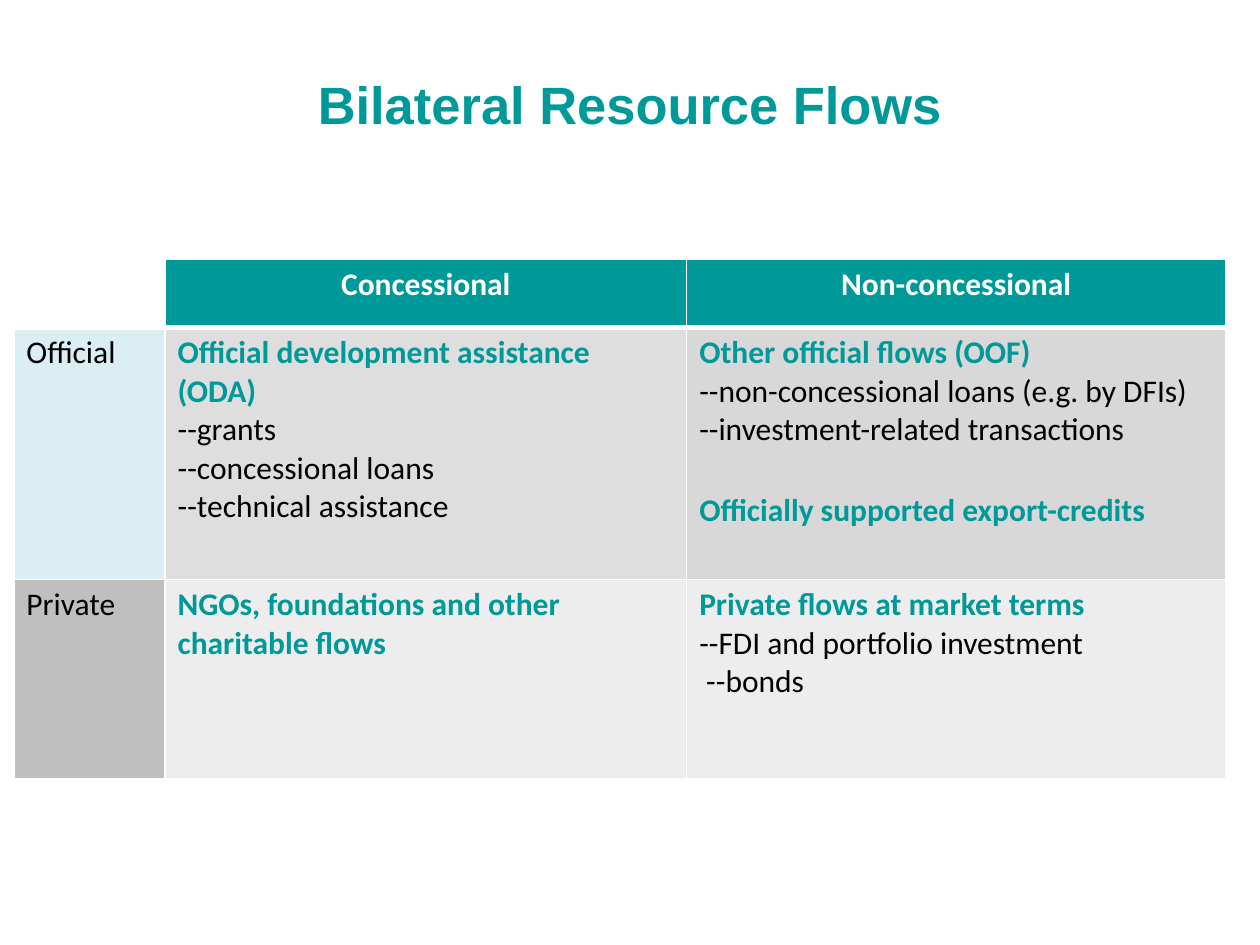
import pptx
import pptx.util
import pptx.dml.color
import pptx.enum.text
import pptx.oxml
import pptx.oxml.ns

Inches, Pt = pptx.util.Inches, pptx.util.Pt
RGBColor = pptx.dml.color.RGBColor
CENTER = pptx.enum.text.PP_ALIGN.CENTER

TEAL = RGBColor(0x00, 0x99, 0x99)
WHITE = RGBColor(0xFF, 0xFF, 0xFF)
BLACK = RGBColor(0x00, 0x00, 0x00)
PALE_BLUE = RGBColor(0xB7, 0xDE, 0xE8)
MID_GREY = RGBColor(0xBF, 0xBF, 0xBF)
LIGHT_GREY = RGBColor(0xD8, 0xD8, 0xD8)
FAINT_GREY = RGBColor(0xED, 0xED, 0xED)


def write(frame, text, size=18, font="Calibri", color=BLACK, bold=False,
          align=None, before=0, indent=0):
    """Fill the frame's first paragraph, or add one after existing text."""
    paragraph = frame.add_paragraph() if frame.text else frame.paragraphs[0]
    if indent:
        paragraph._p.get_or_add_pPr().set("marL", str(Pt(indent)))
    if before:
        paragraph.space_before = Pt(before)
    if align is not None:
        paragraph.alignment = align
    run = paragraph.add_run()
    run.text = text
    run.font.size, run.font.name, run.font.bold = Pt(size), font, bold
    run.font.color.rgb = color


def paint(cell, fill, alpha=100, top=1, bottom=1):
    """Give a cell its fill and white borders."""
    cell.fill.solid()
    cell.fill.fore_color.rgb = fill
    properties = cell._tc.get_or_add_tcPr()
    if alpha < 100:
        rgb = properties.find(".//" + pptx.oxml.ns.qn("a:srgbClr"))
        rgb.append(pptx.oxml.parse_xml(
            f'<a:alpha {pptx.oxml.ns.nsdecls("a")} val="{alpha * 1000}"/>'))
    for place, (side, width) in enumerate(zip("LRTB", (1, 1, top, bottom))):
        properties.insert(place, pptx.oxml.parse_xml(
            f'<a:ln{side} {pptx.oxml.ns.nsdecls("a")} w="{Pt(width)}">'
            f'<a:solidFill><a:srgbClr val="{WHITE}"/></a:solidFill></a:ln{side}>'))


presentation = pptx.Presentation()
presentation.slide_width, presentation.slide_height = Inches(10), Inches(7.5)
slide = presentation.slides.add_slide(presentation.slide_layouts[5])

# Title
title = slide.shapes.title
title.left, title.top = 0, Inches(0.26)
title.width, title.height = presentation.slide_width, Inches(1.12)
title.text_frame.vertical_anchor = pptx.enum.text.MSO_ANCHOR.MIDDLE
write(title.text_frame, "Bilateral Resource Flows", size=30, font="Arial",
      color=TEAL, bold=True, align=CENTER)

# Flows by source (rows) and terms (columns)
column_widths = (1.2, 4.14, 4.28)
row_heights = (0.54, 2, 1.58)
flows = slide.shapes.add_table(
    len(row_heights), len(column_widths), Inches(0.11), Inches(2.06),
    Inches(sum(column_widths)), Inches(sum(row_heights))).table
flows.horz_banding = False
for column, width in zip(flows.columns, column_widths):
    column.width = Inches(width)
for row, height in zip(flows.rows, row_heights):
    row.height = Inches(height)

# Header row
for column, (terms, fill) in enumerate(
        [("", WHITE), ("Concessional", TEAL), ("Non-concessional", TEAL)]):
    header = flows.cell(0, column)
    paint(header, fill, bottom=3)
    if terms:
        write(header.text_frame, terms, color=WHITE, bold=True, align=CENTER)

# Body rows: source, then (heading, items) groups, with fill and opacity
body = [
    [("Official", PALE_BLUE, 50),
     ([("Official development assistance (ODA)",
        ["--grants", "--concessional loans", "--technical assistance"])],
      MID_GREY, 50),
     ([("Other official flows (OOF)",
        ["--non-concessional loans (e.g. by DFIs)",
         "--investment-related transactions"]),
       ("Officially supported export-credits", [])], LIGHT_GREY, 100)],
    [("Private", MID_GREY, 100),
     ([("NGOs, foundations and other charitable flows", [])], FAINT_GREY, 100),
     ([("Private flows at market terms",
        ["--FDI and portfolio investment", "--bonds"])], FAINT_GREY, 100)],
]
for row, cells in enumerate(body, start=1):
    for column, (content, fill, alpha) in enumerate(cells):
        cell = flows.cell(row, column)
        paint(cell, fill, alpha, top=3 if row == 1 else 1)
        if column == 0:
            write(cell.text_frame, content)
            continue
        for group, (heading, items) in enumerate(content):
            write(cell.text_frame, heading, color=TEAL, bold=True,
                  before=24 if group else 0)
            for item in items:
                write(cell.text_frame, item, indent=4 if item == "--bonds" else 0)

presentation.save("out.pptx")
